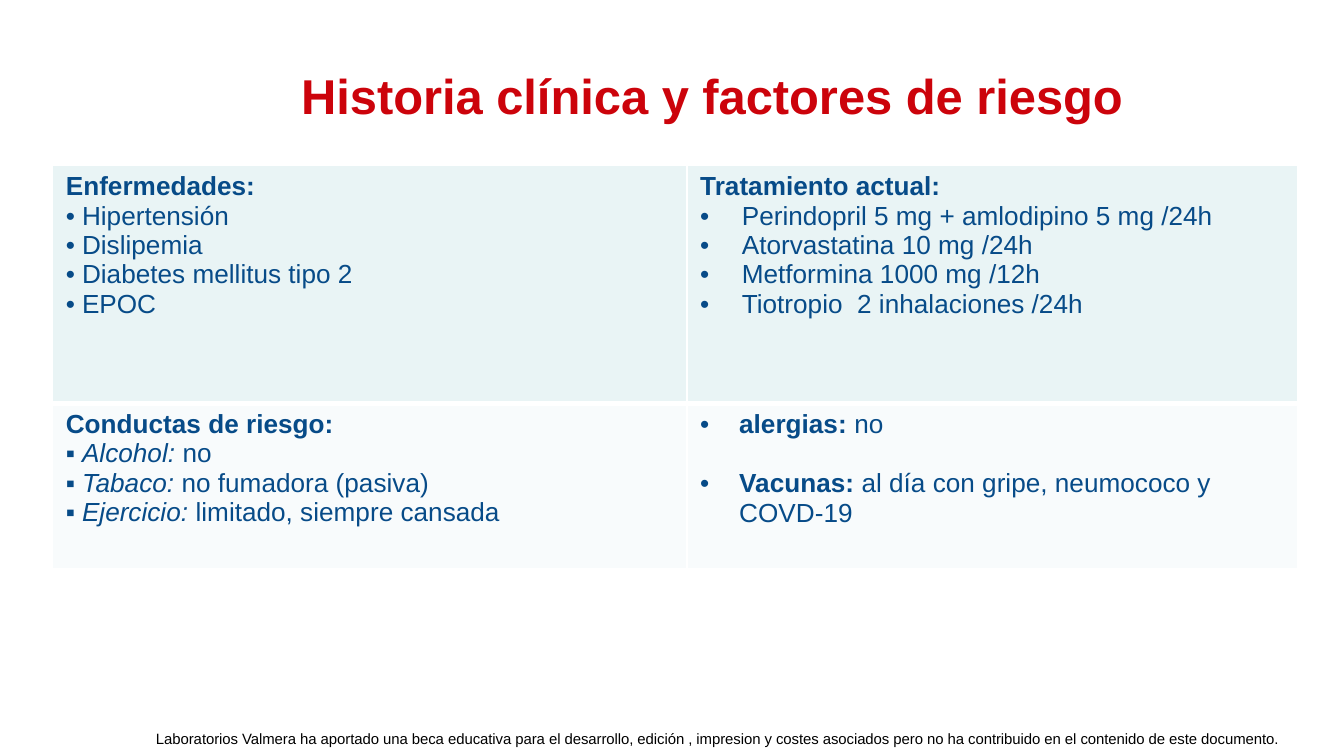
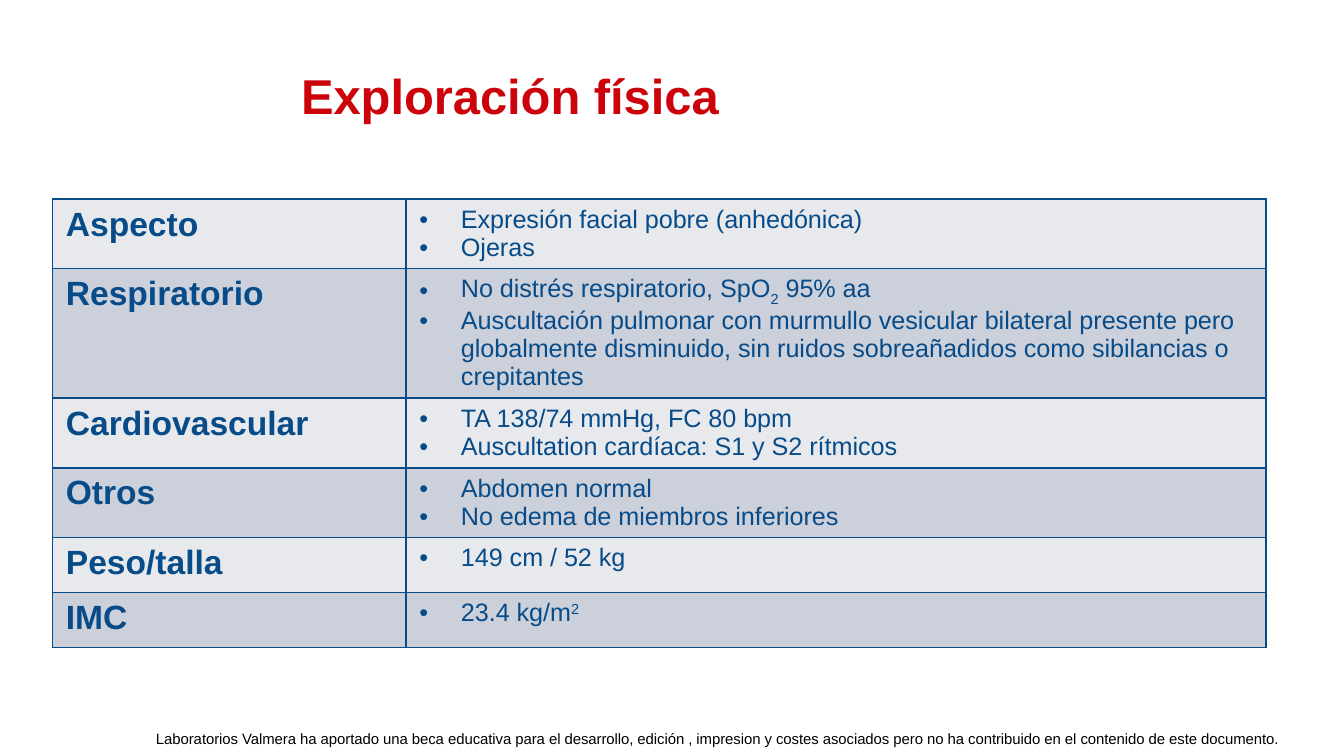
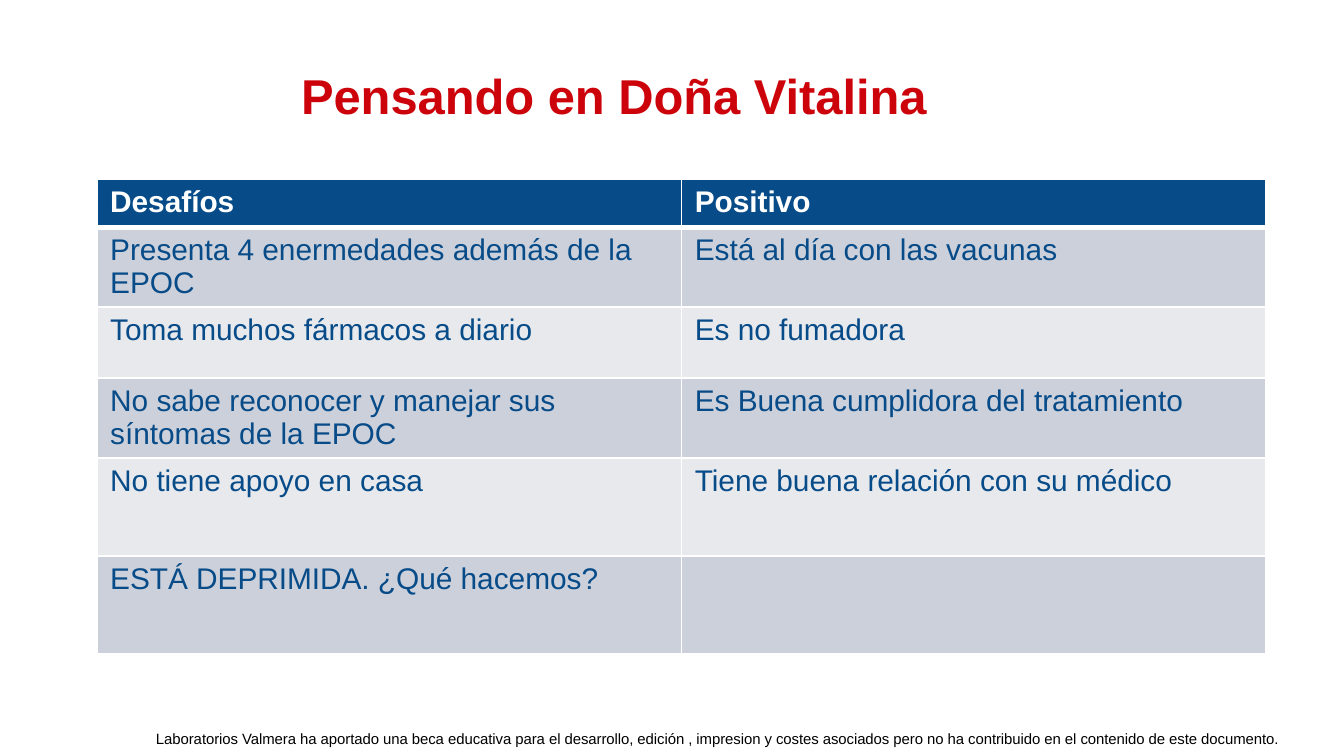
from dataclasses import dataclass

from lxml import etree
from pptx import Presentation
from pptx.dml.color import RGBColor
from pptx.enum.text import MSO_ANCHOR, MSO_AUTO_SIZE, PP_ALIGN
from pptx.oxml.ns import qn
from pptx.util import Inches, Pt

LEFT, CENTER, JUSTIFY = PP_ALIGN.LEFT, PP_ALIGN.CENTER, PP_ALIGN.JUSTIFY
TOP = MSO_ANCHOR.TOP
NO_FIT = MSO_AUTO_SIZE.NONE
TITLE_ONLY = 5


@dataclass(frozen=True)
class Theme:
    font: str = "Arial"
    red: str = "CC030B"
    blue: str = "074B88"
    white: str = "FFFFFF"
    black: str = "000000"
    mint: str = "E9F4F5"
    ice: str = "F8FBFC"
    pale: str = "E7E9ED"
    grey: str = "CCD0DA"
    title: float = 26.2
    label: float = 18
    head: float = 16
    body: float = 14
    detail: float = 13.5
    note: float = 8


THEME = Theme()
FOOTER = (
    "Laboratorios Valmera ha aportado una beca educativa para el desarrollo, "
    "edición , impresion y costes asociados pero no ha contribuido en el "
    "contenido de este documento."
)


@dataclass(frozen=True)
class Line:
    """A paragraph: runs are (text, style), style being any of "bi" or a baseline shift."""
    runs: tuple
    bullet: str = ""
    indent: float = 0
    align: PP_ALIGN = LEFT
    before: float = 0


def plain(text, style=""):
    return Line(((text, style),))


def points(*texts):
    return [Line(((text, ""),), "•", 0.31) for text in texts]


def tight(bullet, *runs):
    return Line(runs, bullet, 0.12, JUSTIFY)


def add_run(para, text, size, color, style=""):
    run = para.add_run()
    run.text = text
    font = run.font
    font.name, font.size = THEME.font, Pt(size)
    font.color.rgb = RGBColor.from_string(color)
    if isinstance(style, int):
        font.bold = False
        run._r.get_or_add_rPr().set("baseline", str(style * 1000))
    else:
        font.bold, font.italic = "b" in style, "i" in style
    return run


def set_bullet(para, mark, indent):
    props = para._p.get_or_add_pPr()
    props.set("marL", str(Inches(indent)))
    props.set("indent", str(-Inches(indent)))
    etree.SubElement(props, qn("a:buFont")).set("typeface", THEME.font)
    etree.SubElement(props, qn("a:buChar")).set("char", mark)


def write(frame, lines, size, color):
    for i, line in enumerate(lines):
        para = frame.add_paragraph() if i else frame.paragraphs[0]
        para.alignment = line.align
        if line.before:
            para.space_before = Pt(line.before)
        if line.bullet:
            set_bullet(para, line.bullet, line.indent)
        for text, style in line.runs:
            add_run(para, text, size, color, style)


def set_edges(cell, color, base):
    props = cell._tc.get_or_add_tcPr()
    for side, width in (("L", 1), ("R", 1), ("T", 1), ("B", base)):
        edge = etree.SubElement(props, qn(f"a:ln{side}"), w=str(Pt(width)))
        fill = etree.SubElement(edge, qn("a:solidFill"))
        etree.SubElement(fill, qn("a:srgbClr"), val=color)


def fill_cell(cell, lines, size, color, back, edge, base=1):
    """Write a cell; base is the width of its lower border in points."""
    set_edges(cell, edge, base)
    cell.fill.solid()
    cell.fill.fore_color.rgb = RGBColor.from_string(back)
    write(cell.text_frame, lines, size, color)


def add_grid(slide, left, top, height, widths, heights):
    shape = slide.shapes.add_table(
        len(heights), len(widths), Inches(left), Inches(top),
        Inches(sum(widths)), Inches(height))
    table = shape.table
    table.first_row = table.horz_banding = False
    for col, width in zip(table.columns, widths):
        col.width = Inches(width)
    for row, tall in zip(table.rows, heights):
        row.height = Inches(tall)
    shape.height = Inches(height)
    return table


def add_slide(deck, title):
    slide = deck.slides.add_slide(deck.slide_layouts[TITLE_ONLY])
    box = slide.shapes.title
    box.left, box.top = Inches(2.14), Inches(0.44)
    box.width, box.height = Inches(7.86), Inches(0.62)
    frame = box.text_frame
    frame.auto_size, frame.vertical_anchor = NO_FIT, TOP
    write(frame, [plain(title, "b")], THEME.title, THEME.red)
    return slide


def share_footer(slide):
    """Build the footer and move it to the layout, so that every slide shows it."""
    box = slide.shapes.add_textbox(
        Inches(1.11), Inches(5.4), Inches(8.46), Inches(0.2))
    frame = box.text_frame
    frame.word_wrap = True
    frame.margin_left = frame.margin_right = frame.margin_bottom = 0
    frame.margin_top = Inches(0.03)
    para = frame.paragraphs[0]
    para.alignment = CENTER
    run = add_run(para, FOOTER, THEME.note, THEME.black)
    run._r.get_or_add_rPr().set("spc", "-5")
    slide.slide_layout.shapes.element.append(box.element)


def add_history(deck):
    slide = add_slide(deck, "Historia clínica y factores de riesgo")
    ills = ("Hipertensión", "Dislipemia", "Diabetes mellitus tipo 2", "EPOC")
    habits = (
        ("Alcohol: ", "no"),
        ("Tabaco: ", "no fumadora (pasiva)"),
        ("Ejercicio: ", "limitado, siempre cansada"),
    )
    rows = (
        ([plain("Enfermedades:", "b")] + [tight("•", (ill, "")) for ill in ills],
         [plain("Tratamiento actual:", "b")] + points(
             "Perindopril 5 mg + amlodipino 5 mg /24h",
             "Atorvastatina 10 mg /24h",
             "Metformina 1000 mg /12h",
             "Tiotropio  2 inhalaciones /24h")),
        ([plain("Conductas de riesgo:", "b")]
         + [tight("▪", (name, "i"), (fact, "")) for name, fact in habits],
         [Line((("alergias: ", "b"), ("no", "")), "•", 0.29),
          Line((("Vacunas: ", "b"),
                ("al día con gripe, neumococo y COVD-19", "")),
               "•", 0.29, before=16)]),
    )
    table = add_grid(slide, 0.39, 1.23, 3, (4.72, 4.55), (1.77, 1.23))
    looks = ((THEME.mint, 3), (THEME.ice, 1))
    for r, (row, (back, base)) in enumerate(zip(rows, looks)):
        for c, lines in enumerate(row):
            fill_cell(table.cell(r, c), lines, THEME.body, THEME.blue,
                      back, THEME.white, base)
    return slide


def add_exam(deck):
    slide = add_slide(deck, "Exploración física")
    oxygen = Line((("No distrés respiratorio, SpO", ""), ("2", -25),
                   (" 95% aa", "")), "•", 0.31)
    index = Line((("23.4 kg/m", ""), ("2", 30)), "•", 0.31)
    rows = (
        ("Aspecto", points("Expresión facial pobre (anhedónica)", "Ojeras")),
        ("Respiratorio", [oxygen] + points(
            "Auscultación pulmonar con murmullo vesicular bilateral presente "
            "pero globalmente disminuido, sin ruidos sobreañadidos como "
            "sibilancias o crepitantes")),
        ("Cardiovascular", points(
            "TA 138/74 mmHg, FC 80 bpm",
            "Auscultation cardíaca: S1 y S2 rítmicos")),
        ("Otros", points("Abdomen normal", "No edema de miembros inferiores")),
        ("Peso/talla", points("149 cm / 52 kg")),
        ("IMC", [index]),
    )
    table = add_grid(slide, 0.39, 1.48, 3.46, (2.63, 6.4), [0.41] * len(rows))
    for r, (name, finds) in enumerate(rows):
        back = THEME.grey if r % 2 else THEME.pale
        fill_cell(table.cell(r, 0), [plain(name, "b")], THEME.label,
                  THEME.blue, back, THEME.blue)
        fill_cell(table.cell(r, 1), finds, THEME.detail,
                  THEME.blue, back, THEME.blue)


def add_balance(deck):
    slide = add_slide(deck, "Pensando en Doña Vitalina")
    rows = (
        ("Desafíos", "Positivo"),
        ("Presenta 4 enermedades además de la EPOC",
         "Está al día con las vacunas"),
        ("Toma muchos fármacos a diario", "Es no fumadora"),
        ("No sabe reconocer y manejar sus síntomas de la EPOC",
         "Es Buena cumplidora del tratamiento"),
        ("No tiene apoyo en casa", "Tiene buena relación con su médico"),
        ("ESTÁ DEPRIMIDA. ¿Qué hacemos?", ""),
    )
    table = add_grid(slide, 0.72, 1.33, 3.62, (4.35, 4.35),
                     (0.36, 0.56, 0.53, 0.56, 0.73, 0.73))
    for r, row in enumerate(rows):
        if r == 0:
            color, back, style, base = THEME.white, THEME.blue, "b", 3
        else:
            color, style, base = THEME.blue, "", 1
            back = THEME.grey if r % 2 else THEME.pale
        for c, text in enumerate(row):
            lines = [plain(text, style)] if text else []
            fill_cell(table.cell(r, c), lines, THEME.head, color, back,
                      THEME.white, base)


def main():
    deck = Presentation()
    deck.slide_width = Inches(10)
    deck.slide_height = Inches(10) * 9 // 16
    share_footer(add_history(deck))
    add_exam(deck)
    add_balance(deck)
    deck.save("out.pptx")


if __name__ == "__main__":
    main()
